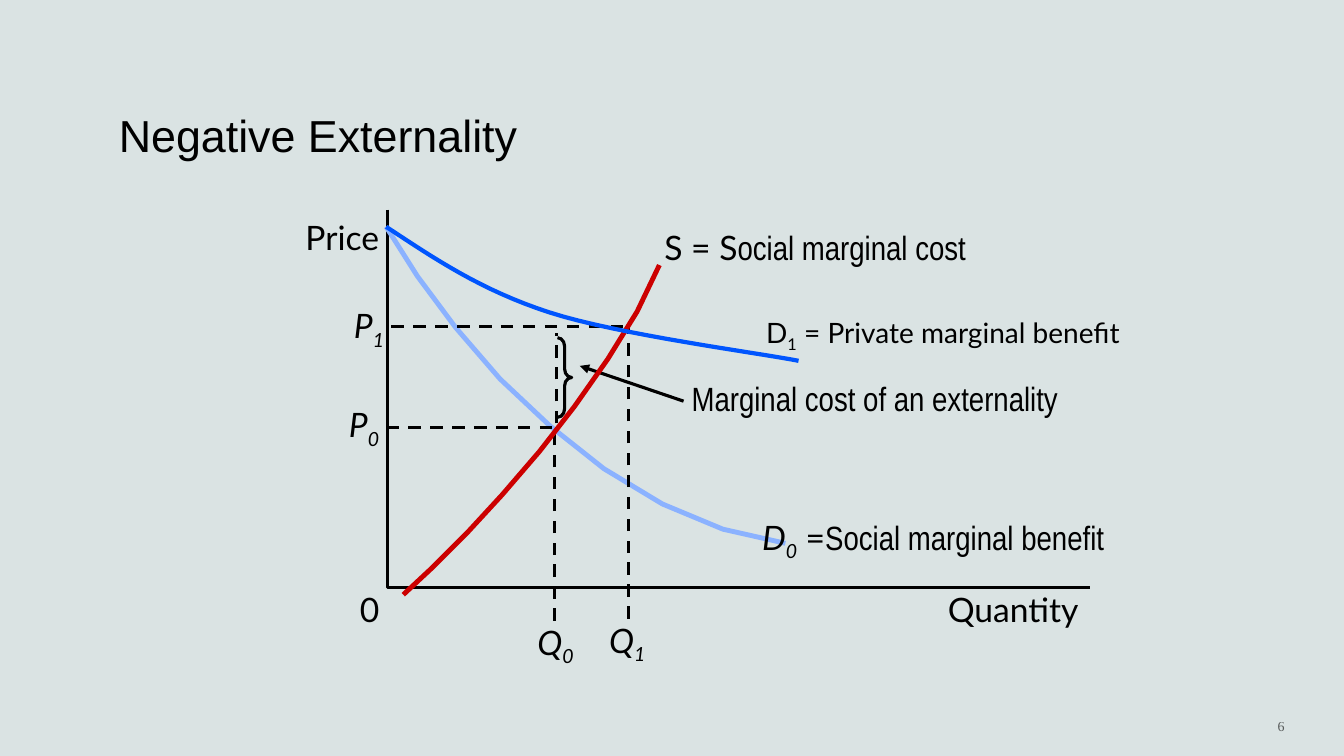
"""Build a supply and demand slide that shows a negative externality."""
from dataclasses import dataclass

from lxml import etree
from pptx import Presentation
from pptx.dml.color import RGBColor
from pptx.enum.dml import MSO_LINE_DASH_STYLE
from pptx.enum.shapes import MSO_CONNECTOR_TYPE, MSO_SHAPE
from pptx.enum.text import MSO_ANCHOR, MSO_AUTO_SIZE, PP_ALIGN
from pptx.oxml.ns import qn
from pptx.slide import Slide
from pptx.util import Pt

PX = 9144
WIDTH, HEIGHT = 1333, 750

BACKGROUND = RGBColor(0xDA, 0xE3, 0xE3)
BLACK = RGBColor(0x00, 0x00, 0x00)
PALE_BLUE = RGBColor(0x8B, 0xB2, 0xFF)
BLUE = RGBColor(0x00, 0x55, 0xFE)
RED = RGBColor(0xCC, 0x00, 0x00)

LEFT, RIGHT = PP_ALIGN.LEFT, PP_ALIGN.RIGHT
TOP, MIDDLE, BOTTOM = MSO_ANCHOR.TOP, MSO_ANCHOR.MIDDLE, MSO_ANCHOR.BOTTOM
FIT_SHAPE, FIT_NONE = MSO_AUTO_SIZE.SHAPE_TO_FIT_TEXT, MSO_AUTO_SIZE.NONE
DASH = MSO_LINE_DASH_STYLE.DASH
STRAIGHT = MSO_CONNECTOR_TYPE.STRAIGHT
RIGHT_BRACE = MSO_SHAPE.RIGHT_BRACE

LATO, NARROW = "Lato", "Arial Narrow"

Point = tuple[float, float]


@dataclass(frozen=True)
class Run:
    text: str
    font: str = LATO
    size: int = 24
    italic: bool = False
    subscript: bool = False
    alpha: int = 100


@dataclass(frozen=True)
class Label:
    box: tuple[int, int, int, int]
    runs: tuple[Run, ...]
    align: PP_ALIGN = LEFT
    anchor: MSO_ANCHOR = TOP
    inset: tuple[int, int] = (0, 0)
    spacing: float = 1.0
    wrap: bool = False
    grow: bool = True


@dataclass(frozen=True)
class Segment:
    start: tuple[int, int]
    end: tuple[int, int]
    dashed: bool = True
    arrow: bool = False


@dataclass(frozen=True)
class Curve:
    points: tuple[Point, ...]
    color: RGBColor
    weight: float


def symbol(letter: str, index: str) -> tuple[Run, Run]:
    """Return the runs of an italic letter with a subscript."""
    return Run(letter, italic=True), Run(index, italic=True, subscript=True)


def bezier(a: Point, b: Point, c: Point, d: Point, steps: int = 16) -> tuple[Point, ...]:
    """Return points along a cubic curve from a to d."""
    ts = [i / steps for i in range(steps + 1)]
    return tuple(
        tuple(
            (1 - t) ** 3 * p + 3 * (1 - t) ** 2 * t * q + 3 * (1 - t) * t**2 * r + t**3 * s
            for p, q, r, s in zip(a, b, c, d)
        )
        for t in ts
    )


AXES = Curve(((384, 208), (384, 583), (1081, 583)), BLACK, 2.25)
SOCIAL_BENEFIT = Curve(
    ((383, 225), (414, 274), (452, 325), (496, 376), (546, 423),
     (599, 465), (657, 500), (717, 525), (779, 539)),
    PALE_BLUE, 3.5,
)
SOCIAL_COST = Curve(
    ((400, 590), (429, 563), (463, 529), (498, 491), (535, 448),
     (570, 403), (603, 356), (632, 309), (654, 263)),
    RED, 3.5,
)
PRIVATE_BENEFIT = Curve(
    bezier((383, 225), (430, 256), (477, 288), (545, 310))
    + bezier((545, 310), (613, 332), (751, 350), (792, 358))[1:],
    BLUE, 3,
)

SEGMENTS = (
    Segment((678, 398), (575, 363), dashed=False, arrow=True),
    Segment((550, 616), (550, 421)),
    Segment((383, 424), (548, 424)),
    Segment((623, 614), (623, 325)),
    Segment((388, 324), (622, 324)),
    Segment((552, 420), (552, 330)),
)

LABELS = (
    Label((1092, 695, 192, 50), (Run("6", "Times New Roman", 10, alpha=60),),
          RIGHT, MIDDLE, (10, 5), wrap=True, grow=False),
    Label((108, 43, 1117, 122), (Run("Negative Externality", "Arial", 32),),
          anchor=BOTTOM, inset=(10, 5), wrap=True, grow=False),
    Label((302, 215, 74, 40), (Run("Price"),), RIGHT),
    Label((940, 584, 132, 40), (Run("Quantity"),)),
    Label((357, 584, 19, 40), (Run("0"),), RIGHT),
    Label((344, 401, 32, 40), symbol("P", "0"), RIGHT),
    Label((349, 303, 32, 40), symbol("P", "1"), RIGHT),
    Label((533, 617, 41, 40), symbol("Q", "0")),
    Label((604, 615, 41, 40), symbol("Q", "1")),
    Label((686, 383, 400, 32), (Run("Marginal cost of an externality", NARROW),),
          spacing=0.8, wrap=True),
    Label((746, 517, 370, 33),
          symbol("D", "0") + (Run(" ="), Run("Social marginal benefit", NARROW)),
          inset=(10, 0), spacing=0.8),
    Label((659, 233, 306, 32), (Run("S = S"), Run("ocial marginal cost", NARROW)),
          spacing=0.8),
    Label((750, 308, 425, 43),
          (Run("D", size=20), Run("1", size=20, subscript=True),
           Run(" = Private marginal benefit", size=20)),
          inset=(10, 5), wrap=True),
)


def add_label(s: Slide, label: Label) -> None:
    """Add a text box with its runs."""
    tf = s.shapes.add_textbox(*(v * PX for v in label.box)).text_frame
    tf.word_wrap = label.wrap
    tf.auto_size = FIT_SHAPE if label.grow else FIT_NONE
    tf.vertical_anchor = label.anchor
    tf.margin_left = tf.margin_right = label.inset[0] * PX
    tf.margin_top = tf.margin_bottom = label.inset[1] * PX
    p = tf.paragraphs[0]
    p.alignment = label.align
    p.line_spacing = label.spacing
    for run in label.runs:
        r = p.add_run()
        r.text = run.text
        r.font.name = run.font
        r.font.size = Pt(run.size)
        r.font.italic = run.italic
        r.font.color.rgb = BLACK
        props = r._r.get_or_add_rPr()
        if run.subscript:
            props.set("baseline", "-25000")
        if run.alpha < 100:
            color = props.find(f".//{qn('a:srgbClr')}")
            etree.SubElement(color, qn("a:alpha"), val=str(run.alpha * 1000))


def add_segment(s: Slide, segment: Segment) -> None:
    """Add a straight line, dashed or with an arrowhead."""
    ends = (v * PX for v in segment.start + segment.end)
    sp = s.shapes.add_connector(STRAIGHT, *ends)
    sp.line.color.rgb = BLACK
    sp.line.width = Pt(2.25)
    if segment.dashed:
        sp.line.dash_style = DASH
    if segment.arrow:
        etree.SubElement(sp.line._get_or_add_ln(), qn("a:tailEnd"), type="triangle")
    etree.SubElement(sp._element.spPr, qn("a:effectLst"))


def add_curve(s: Slide, curve: Curve) -> None:
    """Add an open outline through the points of a curve."""
    start, *rest = [(round(x * PX), round(y * PX)) for x, y in curve.points]
    builder = s.shapes.build_freeform(*start)
    builder.add_line_segments(rest, close=False)
    sp = builder.convert_to_shape()
    sp.shadow.inherit = False
    sp.fill.background()
    sp.line.color.rgb = curve.color
    sp.line.width = Pt(curve.weight)


def add_cost_brace(s: Slide) -> None:
    """Add the brace that marks the cost of the externality."""
    sp = s.shapes.add_shape(RIGHT_BRACE, *(v * PX for v in (553, 335, 14, 79)))
    sp.shadow.inherit = False
    sp.adjustments[0] = 0.6
    sp.fill.background()
    sp.line.color.rgb = BLACK
    sp.line.width = Pt(2.25)


def main() -> None:
    """Draw the slide and save it."""
    prs = Presentation()
    prs.slide_width, prs.slide_height = WIDTH * PX, HEIGHT * PX
    s = prs.slides.add_slide(prs.slide_layouts[6])
    s.background.fill.solid()
    s.background.fill.fore_color.rgb = BACKGROUND
    add_curve(s, AXES)
    add_curve(s, SOCIAL_BENEFIT)
    for segment in SEGMENTS:
        add_segment(s, segment)
    add_curve(s, SOCIAL_COST)
    add_cost_brace(s)
    add_curve(s, PRIVATE_BENEFIT)
    for label in LABELS:
        add_label(s, label)
    prs.save("out.pptx")


if __name__ == "__main__":
    main()
